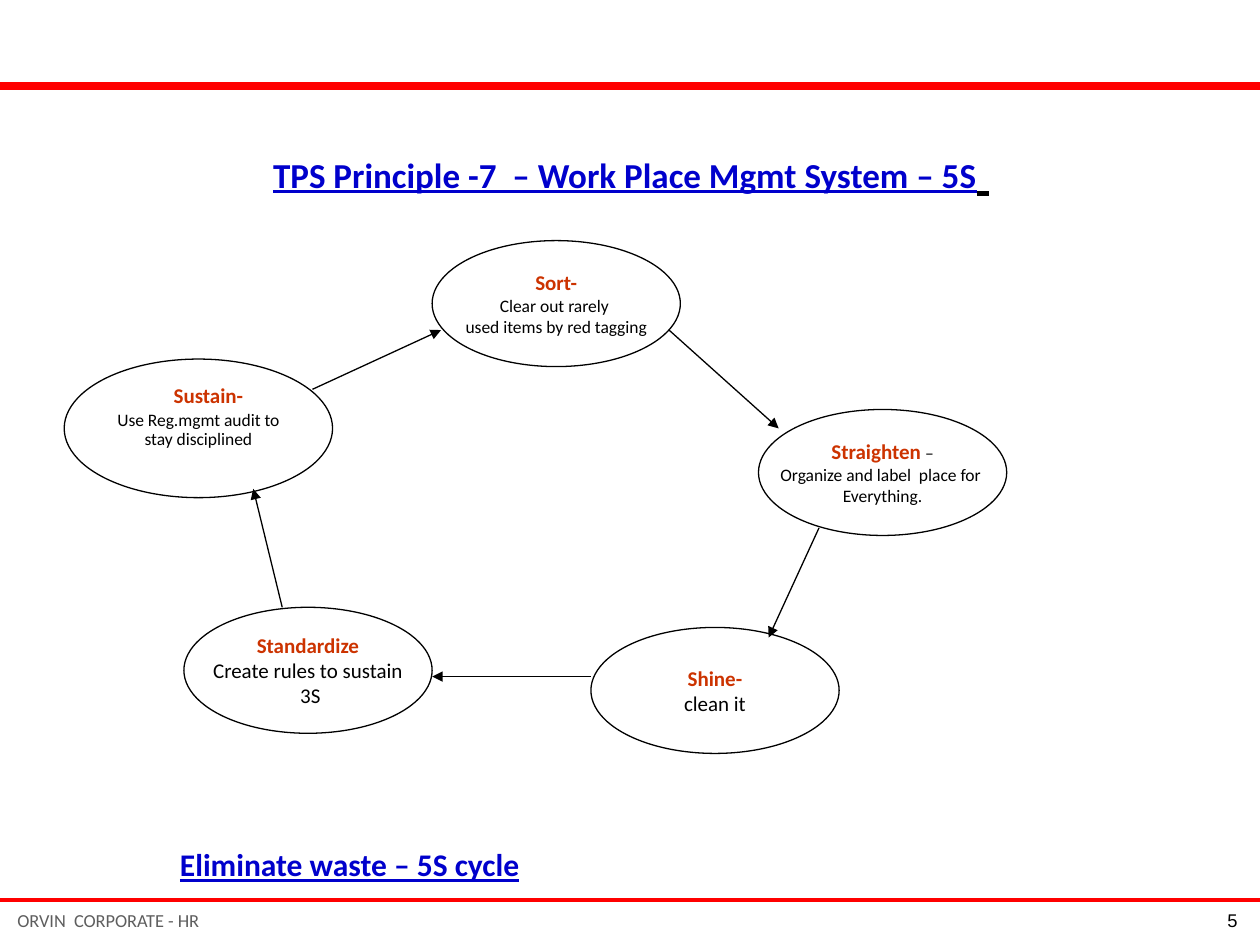
from pptx import Presentation
from pptx.dml.color import RGBColor
from pptx.enum.shapes import MSO_CONNECTOR, MSO_SHAPE
from pptx.enum.text import MSO_ANCHOR, PP_ALIGN
from pptx.oxml.ns import qn
from pptx.util import Inches, Pt
from lxml import etree

LINE = MSO_CONNECTOR.STRAIGHT
OVAL = MSO_SHAPE.OVAL
TOP, MIDDLE = MSO_ANCHOR.TOP, MSO_ANCHOR.MIDDLE
LEFT, CENTER, RIGHT = PP_ALIGN.LEFT, PP_ALIGN.CENTER, PP_ALIGN.RIGHT
COLORS = {
    "black": "000000",
    "white": "FFFFFF",
    "rule": "FF0000",
    "heading": "0000CC",
    "step": "CC3300",
    "footer": "5E5E5E",
}
OVAL_W, OVAL_H = 1.97, 1


def rgb(name):
    return RGBColor.from_string(COLORS[name])


def add_run(p, text, size, color="black", bold=False, underline=False, font="Calibri"):
    r = p.add_run()
    r.text = text
    r.font.name = font
    r.font.size = Pt(size)
    r.font.bold = bold
    r.font.underline = underline
    r.font.color.rgb = rgb(color)


def set_indent(p, left):
    pPr = p._p.get_or_add_pPr()
    pPr.set("marL", str(Inches(left)))
    pPr.set("indent", "0")


def add_text(s, left, top, width, height, align=LEFT):
    tf = s.shapes.add_textbox(Inches(left), Inches(top), Inches(width), Inches(height)).text_frame
    tf.word_wrap = True
    p = tf.paragraphs[0]
    p.alignment = align
    return p


def add_line(s, start, end, color="black", width=0.75, arrow=False):
    x1, y1, x2, y2 = (Inches(v) for v in (*start, *end))
    line = s.shapes.add_connector(LINE, x1, y1, x2, y2)
    line.line.color.rgb = rgb(color)
    line.line.width = Pt(width)
    if arrow:
        tail = etree.SubElement(line.line._get_or_add_ln(), qn("a:tailEnd"))
        tail.set("type", "triangle")
    etree.SubElement(line._element.spPr, qn("a:effectLst"))


def add_step(s, left, top, paragraphs, width=OVAL_W, height=OVAL_H, anchor=MIDDLE, wrap=False):
    sp = s.shapes.add_shape(OVAL, Inches(left), Inches(top), Inches(width), Inches(height))
    sp.shadow.inherit = False
    sp.fill.solid()
    sp.fill.fore_color.rgb = rgb("white")
    sp.line.color.rgb = rgb("black")
    sp.line.width = Pt(0.75)
    tf = sp.text_frame
    tf.word_wrap = wrap
    tf.vertical_anchor = anchor
    for i, runs in enumerate(paragraphs):
        p = tf.paragraphs[0] if i == 0 else tf.add_paragraph()
        p.alignment = CENTER
        for run in runs:
            add_run(p, *run)
    return tf


def add_title(s):
    title = s.shapes.title
    title.left, title.top = Inches(0.51), Inches(0.96)
    title.width, title.height = Inches(9), Inches(0.71)
    tf = title.text_frame
    tf.vertical_anchor = MIDDLE
    p = tf.paragraphs[0]
    p.alignment = CENTER
    add_run(p, "TPS Principle -7  – Work Place Mgmt System – 5S", 20, "heading", True, True)
    add_run(p, " ", 32, "black", True, True)


def add_cycle(s):
    def name(text):
        return (text, 12, "step", True)

    # Steps of the cycle
    add_step(s, 3.43, 1.91, [
        [name("Sort-")],
        [("Clear out rarely ", 10)],
        [("used items by red tagging", 10)],
    ])
    sustain = add_step(s, 0.51, 2.85, [
        [name("Sustain-")],
        [("Use Reg.mgmt audit to stay disciplined", 10)],
    ], width=2.13, height=1.1, anchor=TOP, wrap=True)
    for p in sustain.paragraphs:
        p.line_spacing = 0.9
    set_indent(sustain.paragraphs[0], 0.16)
    sustain.paragraphs[1].space_before = Pt(2)
    add_step(s, 6.02, 3.25, [
        [name("Straighten"), (" ", 10, "step", True), ("–", 10)],
        [("Organize and label  place for ", 10)],
        [("Everything.", 10)],
    ])
    add_step(s, 4.69, 4.98, [[name("Shine-")], [("clean it", 12)]])
    add_step(s, 1.46, 4.82, [
        [name("Standardize")],
        [("Create rules to sustain", 12)],
        [(" 3S", 12)],
    ])

    # Arrows from step to step
    for start, end in [
        ((5.31, 2.62), (6.18, 3.4)),
        ((6.5, 4.19), (6.1, 5.06)),
        ((4.69, 5.37), (3.43, 5.37)),
        ((2.24, 4.82), (2.01, 3.88)),
        ((2.48, 3.09), (3.5, 2.62)),
    ]:
        add_line(s, start, end, arrow=True)


def main():
    prs = Presentation()
    prs.slide_width, prs.slide_height = Inches(10), Inches(7.5)
    s = prs.slides.add_slide(prs.slide_layouts[5])

    # Rules and footer
    add_line(s, (0, 0.68), (10, 0.68), "rule", 4.5)
    add_line(s, (0, 7.14), (10, 7.14), "rule", 2.25)
    add_run(add_text(s, 0.04, 7.17, 2.13, 0.28), "ORVIN  CORPORATE - HR", 10.5, "footer")
    add_run(add_text(s, 7.5, 7.17, 2.42, 0.26, RIGHT), "5", 10.5, font="Arial")

    add_title(s)
    add_cycle(s)

    # Closing line
    p = add_text(s, 1.22, 6.66, 5.28, 0.4)
    set_indent(p, 0.11)
    add_run(p, "Eliminate waste – 5S cycle", 18, "heading", True, True)

    prs.save("out.pptx")


if __name__ == "__main__":
    main()
